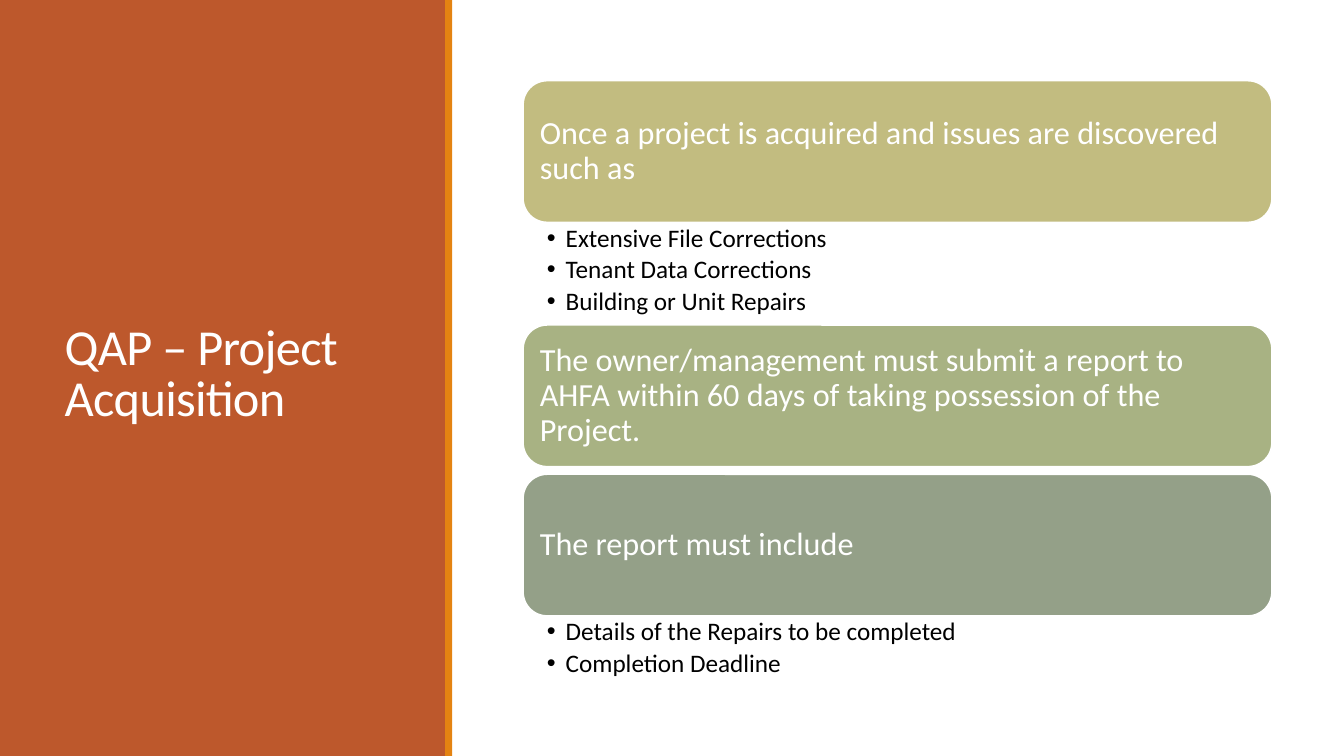
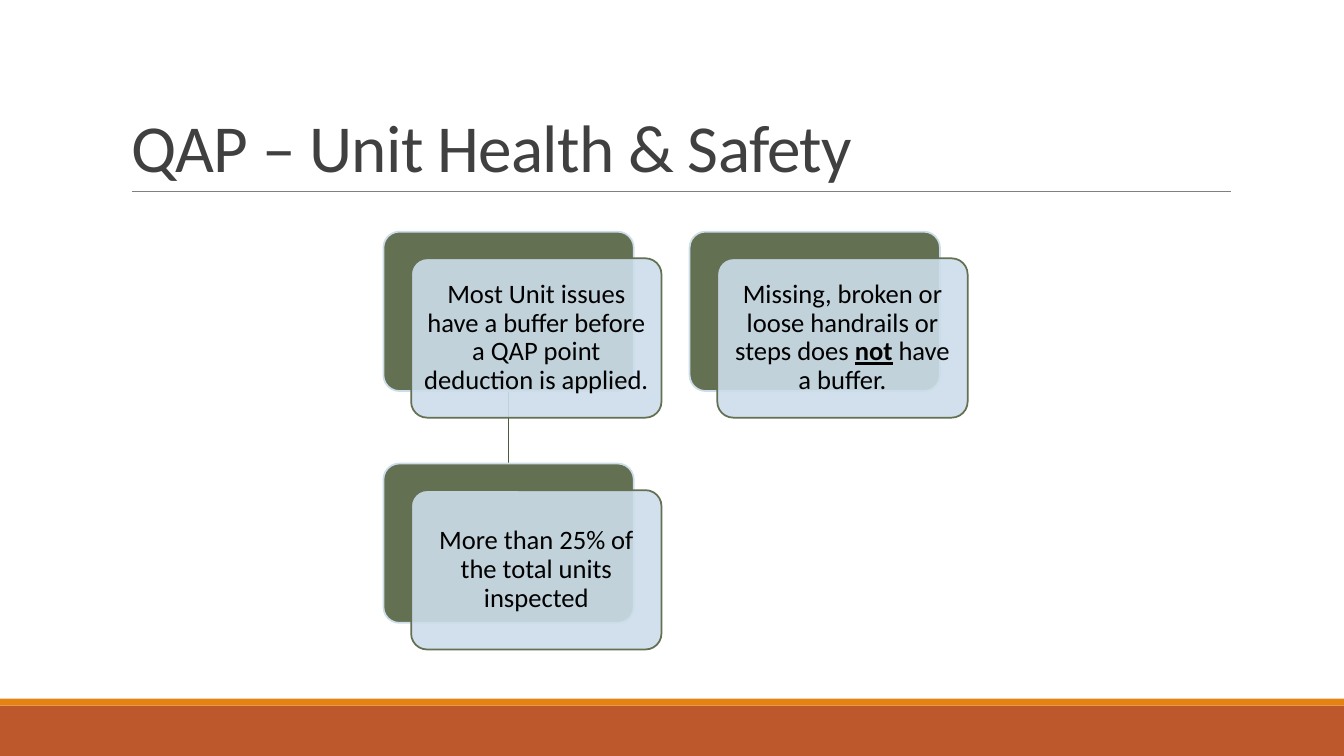
from dataclasses import dataclass

from lxml import etree
from pptx import Presentation
from pptx import util as u
from pptx.dml.color import RGBColor
from pptx.enum import shapes, text
from pptx.oxml import ns

Pt = u.Pt
COLORS = {
    "rust": "BD582C", "orange": "E48312", "white": "FFFFFF", "black": "000000",
    "charcoal": "404040", "gray": "808080", "sand": "C2BC80", "sage": "A8B283",
    "slate": "94A088", "moss": "637052", "mist": "CCDDEA", "stem": "4F5A42",
}
FONT = "Calibri"


@dataclass(frozen=True)
class Area:
    left: float
    top: float
    width: float
    height: float

    def lengths(self):
        return [Pt(v) for v in (self.left, self.top, self.width, self.height)]

    def moved(self, across: float, down: float) -> "Area":
        return Area(self.left + across, self.top + down, self.width, self.height)


@dataclass(frozen=True)
class Span:
    text: str
    strong: bool = False


@dataclass(frozen=True)
class Style:
    size: float
    color: str
    line_spacing: float = 0.9
    space_after: float = 0
    align: text.PP_ALIGN = text.PP_ALIGN.LEFT
    tracking: int = 0
    bullet: bool = False


@dataclass(frozen=True)
class Section:
    heading: str
    fill: str
    bullets: tuple[str, ...] = ()
    space_below: float = 0


@dataclass(frozen=True)
class Card:
    column: int
    row: int
    spans: tuple[Span, ...]


HEADING = Style(23, "white")
BULLET = Style(18, "black", space_after=3, bullet=True)
CARD_TEXT = Style(19, "black", align=text.PP_ALIGN.CENTER)
SIDE_TITLE = Style(36, "white", line_spacing=0.85, tracking=-50)
TOP_TITLE = Style(48, "charcoal", line_spacing=0.85, tracking=-50)

STACK = Area(373.6, 57.6, 535, 101.3)
SECTIONS = (
    Section("Once a project is acquired and issues are discovered such as", "sand",
            ("Extensive File Corrections", "Tenant Data Corrections",
             "Building or Unit Repairs"), 73.2),
    Section("The owner/management must submit a report to AHFA within 60 days "
            "of taking possession of the Project.", "sage", space_below=5.3),
    Section("The report must include", "slate",
            ("Details of the Repairs to be completed", "Completion Deadline"), 49),
)

CARD_AREA = Area(273.9, 165.5, 178.8, 113.8)
CARD_STEP = (218.7, 165.6)
CARD_OFFSET = (19.8, 19)
CARDS = (
    Card(0, 0, (Span("Most Unit issues have a buffer before a QAP point "
                     "deduction is applied."),)),
    Card(0, 1, (Span("More than 25% of the total units inspected"),)),
    Card(1, 0, (Span("Missing, broken or loose handrails or steps does "),
                Span("not", True), Span(" have a buffer."))),
)


def rgb(name: str) -> RGBColor:
    return RGBColor.from_string(COLORS[name])


def assign(target, values: dict) -> None:
    for name, value in values.items():
        setattr(target, name, value)


def add_box(page, area: Area, fill: str, line: str = "", corner: float | None = None,
            opacity: int = 100):
    kind = shapes.MSO_SHAPE.RECTANGLE if corner is None else shapes.MSO_SHAPE.ROUNDED_RECTANGLE
    box = page.shapes.add_shape(kind, *area.lengths())
    box.shadow.inherit = False
    box.fill.solid()
    box.fill.fore_color.rgb = rgb(fill)
    if corner is not None:
        box.adjustments[0] = corner
    if opacity < 100:
        color = box.element.spPr.find(ns.qn("a:solidFill"))[0]
        etree.SubElement(color, ns.qn("a:alpha"), val=str(opacity * 1000))
    if line:
        box.line.color.rgb = rgb(line)
        box.line.width = Pt(1.25)
    else:
        box.line.fill.background()
    return box


def add_line(page, start: tuple[float, float], end: tuple[float, float],
             color: str, width: float) -> None:
    line = page.shapes.add_connector(shapes.MSO_CONNECTOR.STRAIGHT,
                                     *[Pt(v) for v in start + end])
    line.line.color.rgb = rgb(color)
    line.line.width = Pt(width)
    etree.SubElement(line.element.spPr, ns.qn("a:effectLst"))


def write(box, paragraphs: list[tuple[Span, ...]], style: Style,
          margins: tuple[float, float, float, float],
          anchor: text.MSO_ANCHOR = text.MSO_ANCHOR.MIDDLE) -> None:
    frame = box.text_frame
    names = ("margin_left", "margin_top", "margin_right", "margin_bottom")
    assign(frame, dict(zip(names, map(Pt, margins))))
    assign(frame, {"word_wrap": True, "auto_size": text.MSO_AUTO_SIZE.NONE,
                   "vertical_anchor": anchor})
    for index, spans in enumerate(paragraphs):
        para = frame.add_paragraph() if index else frame.paragraphs[0]
        assign(para, {"alignment": style.align, "line_spacing": style.line_spacing,
                      "space_before": Pt(0), "space_after": Pt(style.space_after)})
        if style.bullet:
            properties = para._p.get_or_add_pPr()
            properties.set("marL", str(Pt(13.5)))
            properties.set("indent", str(-Pt(13.5)))
            etree.SubElement(properties, ns.qn("a:buFont"), typeface="Arial")
            etree.SubElement(properties, ns.qn("a:buChar"), char="•")
        for span in spans:
            run = para.add_run()
            run.text = span.text
            assign(run.font, {"name": FONT, "size": Pt(style.size),
                              "bold": span.strong, "underline": span.strong})
            run.font.color.rgb = rgb(style.color)
            if style.tracking:
                run._r.get_or_add_rPr().set("spc", str(style.tracking))


def add_page(deck, title: str, area: Area, style: Style, anchor: text.MSO_ANCHOR,
             bands: tuple[Area, Area]):
    page = deck.slides.add_slide(deck.slide_layouts[5])
    for band, fill in zip(bands, ("rust", "orange")):
        add_box(page, band, fill)
    box = page.shapes.title
    assign(box, dict(zip(("left", "top", "width", "height"), area.lengths())))
    write(box, [(Span(title),)], style, (7.2, 3.6, 7.2, 3.6), anchor)
    box.element.getparent().append(box.element)
    return page


def add_sections(page) -> None:
    area = STACK
    for section in SECTIONS:
        box = add_box(page, area, section.fill, "white", 0.17)
        write(box, [(Span(section.heading),)], HEADING, (7, 4, 7, 4))
        if section.bullets:
            below = Area(area.left, area.top + area.height, area.width, section.space_below)
            bullets = page.shapes.add_textbox(*below.lengths())
            write(bullets, [(Span(item),) for item in section.bullets], BULLET,
                  (17, 2.2, 13, 2.2), text.MSO_ANCHOR.TOP)
        area = area.moved(0, area.height + section.space_below)


def add_cards(page) -> None:
    center = CARD_AREA.left + CARD_AREA.width / 2
    add_line(page, (center, CARD_AREA.top + CARD_AREA.height),
             (center, CARD_AREA.top + CARD_STEP[1]), "stem", 1.25)
    for card in CARDS:
        back = CARD_AREA.moved(card.column * CARD_STEP[0], card.row * CARD_STEP[1])
        add_box(page, back, "moss", "mist", 0.1)
        front = add_box(page, back.moved(*CARD_OFFSET), "mist", "moss", 0.1, 90)
        write(front, [card.spans], CARD_TEXT, (5.6, 5.6, 5.6, 5.6))


def main() -> None:
    deck = Presentation()
    assign(deck, {"slide_width": Pt(960), "slide_height": Pt(540)})

    acquisition = add_page(deck, "QAP – Project Acquisition", Area(39, 41, 242.6, 454.3),
                           SIDE_TITLE, text.MSO_ANCHOR.MIDDLE,
                           (Area(0, 0, 319, 540), Area(318, 0, 5, 540)))
    add_sections(acquisition)

    safety = add_page(deck, "QAP – Unit Health & Safety", Area(86.4, 22.3, 792, 114.2),
                      TOP_TITLE, text.MSO_ANCHOR.BOTTOM,
                      (Area(0, 504, 960, 36), Area(0, 499, 960, 5)))
    add_line(safety, (94, 136.8), (879, 136.8), "gray", 0.5)
    add_cards(safety)

    deck.save("out.pptx")


if __name__ == "__main__":
    main()
